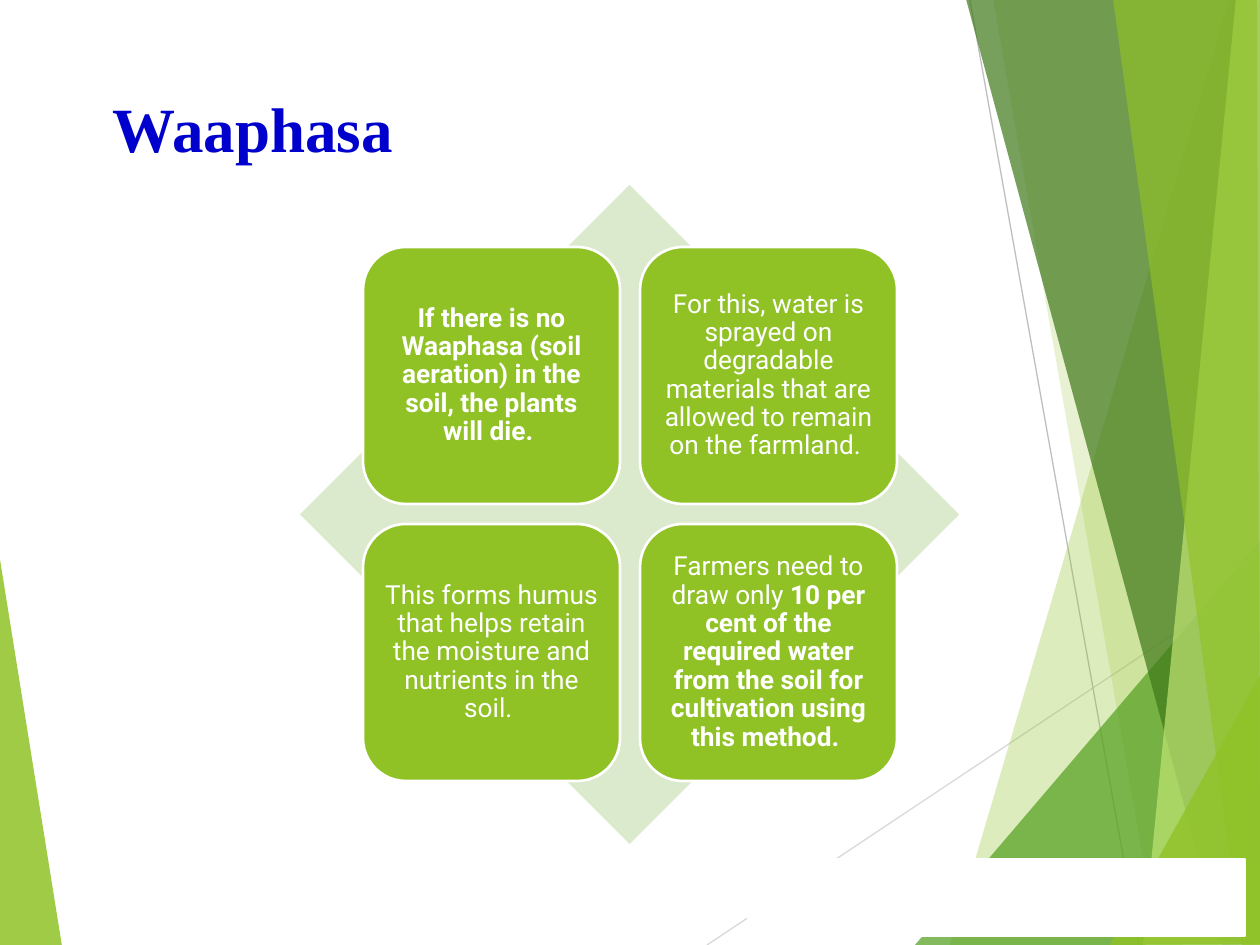
from dataclasses import dataclass
from lxml.etree import SubElement
from pptx import Presentation
from pptx.dml.color import RGBColor
from pptx.enum.shapes import MSO_CONNECTOR, MSO_SHAPE
from pptx.enum.text import MSO_ANCHOR, PP_ALIGN
from pptx.oxml.ns import qn
from pptx.util import Pt

SCALE = 914400 / 126


@dataclass(frozen=True)
class Theme:
    lime: str = "90C226"
    leaf: str = "54A021"
    moss: str = "3F7819"
    pale: str = "C0E474"
    mist: str = "DBE9CD"
    white: str = "FFFFFF"
    blue: str = "0000CC"
    red: str = "FF0000"
    light: str = "D9D9D9"
    grey: str = "BFBFBF"
    head: str = "Times New Roman"
    body: str = "Roboto"
    big: int = 36
    small: int = 15
    edge: float = 1.5
    hair: float = 0.75


THEME = Theme()

# Each facet: colour, opacity in percent, corners in px
FACETS = [
    (THEME.lime, 85, [(-1, 553), (62, 946), (-1, 945)]),
    (THEME.lime, 30, [(1229, 0), (950, 945), (1262, 946), (1261, 1)]),
    (THEME.lime, 20, [(993, -1), (1158, 945), (1261, 945), (1261, -1)]),
    (THEME.leaf, 72, [(915, 945), (1260, 541), (1261, 945)]),
    (THEME.moss, 70, [(966, -1), (1222, 945), (1261, 944), (1261, -1)]),
    (THEME.pale, 70, [(1236, -1), (1143, 945), (1261, 945), (1260, -1)]),
    (THEME.lime, 65, [(1113, -1), (1242, 945), (1260, 945), (1257, -1)]),
    (THEME.lime, 80, [(1110, 945), (1261, 674), (1261, 944)]),
]
LINES = [
    (THEME.light, (707, 945, 1261, 576)),
    (THEME.grey, (970, 0, 1139, 945)),
]

# Each card: runs of (text, bold), in reading order
CARDS = [
    [("If there is no Waaphasa (soil aeration) in the soil, the plants will die. ", True)],
    [("For this, water is sprayed on degradable materials that are allowed to remain "
      "on the farmland. ", False)],
    [("This forms humus that helps retain the moisture and nutrients in the soil. ", False)],
    [("Farmers need to draw only ", False),
     ("10 per cent of the required water from the soil for cultivation using this method. ",
      True)],
]


def px(n):
    return round(n * SCALE)


def rgb(code):
    return RGBColor.from_string(code)


def paint(shape, fill, edge=None):
    shape.shadow.inherit = False
    shape.fill.solid()
    shape.fill.fore_color.rgb = rgb(fill)
    if edge:
        shape.line.color.rgb = rgb(edge)
        shape.line.width = Pt(THEME.edge)
    else:
        shape.line.fill.background()


def add_run(para, text, font, size, color, bold):
    run = para.add_run()
    run.text = text
    run.font.name = font
    run.font.size = Pt(size)
    run.font.bold = bold
    run.font.color.rgb = rgb(color)


def add_block(slide, kind, box, fill, edge=None):
    shape = slide.shapes.add_shape(kind, *map(px, box))
    paint(shape, fill, edge)
    return shape


def add_facet(slide, color, alpha, points):
    pen = slide.shapes.build_freeform(*points[0], scale=SCALE)
    pen.add_line_segments(points[1:], close=True)
    shape = pen.convert_to_shape()
    paint(shape, color)
    tint = shape.fill._xPr.find(".//" + qn("a:srgbClr"))
    SubElement(tint, qn("a:alpha"), val=str(alpha * 1000))


def add_line(slide, color, ends):
    line = slide.shapes.add_connector(MSO_CONNECTOR.STRAIGHT, *map(px, ends))
    line.line.color.rgb = rgb(color)
    line.line.width = Pt(THEME.hair)
    SubElement(line._element.spPr, qn("a:effectLst"))


def set_inset(frame, side, top):
    frame.margin_left = frame.margin_right = px(side)
    frame.margin_top = frame.margin_bottom = px(top)


def set_title(slide):
    title = slide.shapes.title
    title.left, title.top, title.width, title.height = map(px, (84, 84, 874, 181))
    frame = title.text_frame
    frame.word_wrap = True
    frame.vertical_anchor = MSO_ANCHOR.TOP
    set_inset(frame, 13, 6)
    para = frame.paragraphs[0]
    para.alignment = PP_ALIGN.LEFT
    add_run(para, " ", THEME.head, THEME.big, THEME.red, False)
    add_run(para, "Waaphasa", THEME.head, THEME.big, THEME.blue, True)


def add_card(slide, box, runs):
    card = add_block(slide, MSO_SHAPE.ROUNDED_RECTANGLE, box, THEME.lime, THEME.white)
    frame = card.text_frame
    frame.word_wrap = True
    frame.vertical_anchor = MSO_ANCHOR.MIDDLE
    # The shape's rounded corners already inset the text by 13 px
    set_inset(frame, 7, 7)
    para = frame.paragraphs[0]
    para.alignment = PP_ALIGN.CENTER
    para.line_spacing = 0.9
    for text, bold in runs:
        add_run(para, text, THEME.body, THEME.small, THEME.white, bold)


def add_matrix(slide):
    """Diamond with a two by two grid of cards on it."""
    add_block(slide, MSO_SHAPE.DIAMOND, (300, 185, 659, 659), THEME.mist)
    size, step = 257, 277
    for i, runs in enumerate(CARDS):
        row, col = divmod(i, 2)
        add_card(slide, (363 + col * step, 247 + row * step, size, size), runs)


def main():
    deck = Presentation()
    deck.slide_width, deck.slide_height = px(1260), px(945)
    slide = deck.slides.add_slide(deck.slide_layouts[5])
    add_facet(slide, *FACETS[0])
    for color, ends in LINES:
        add_line(slide, color, ends)
    for facet in FACETS[1:]:
        add_facet(slide, *facet)
    set_title(slide)
    add_matrix(slide)
    add_block(slide, MSO_SHAPE.RECTANGLE, (748, 859, 497, 77), THEME.white, THEME.white)
    deck.save("out.pptx")


if __name__ == "__main__":
    main()
